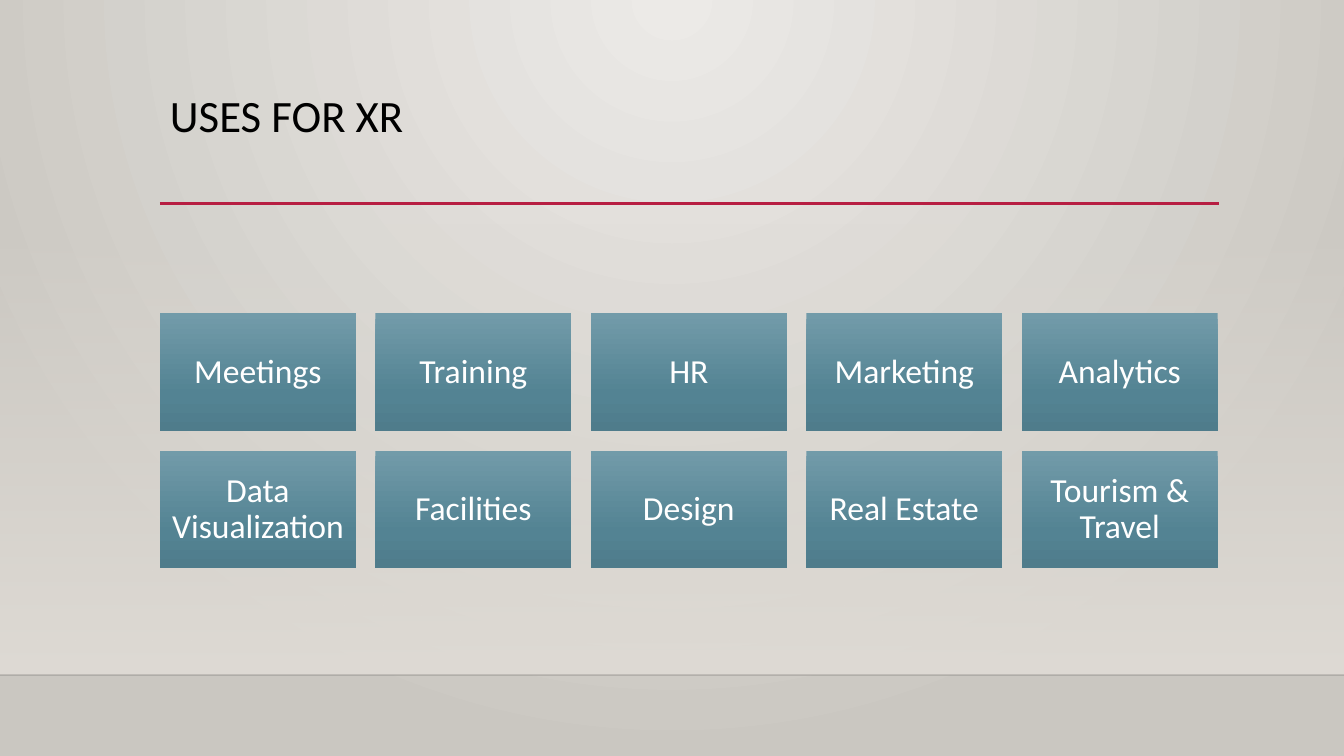
from lxml.etree import SubElement
from pptx import Presentation
from pptx.dml.color import RGBColor
from pptx.enum.shapes import MSO_CONNECTOR, MSO_SHAPE
from pptx.enum.text import MSO_ANCHOR, PP_ALIGN
from pptx.oxml.ns import qn
from pptx.util import Cm, Pt

BLACK = RGBColor(0x00, 0x00, 0x00)
WHITE = RGBColor(0xFF, 0xFF, 0xFF)
CRIMSON = RGBColor(0xB7, 0x1E, 0x42)
FLOOR_EDGE = RGBColor(0x00, 0x00, 0x01)
WALL_LIGHT = RGBColor(0xEC, 0xEA, 0xE7)
WALL_DARK = RGBColor(0xCA, 0xC7, 0xC1)
HAZE = RGBColor(0xDF, 0xDB, 0xD5)
TEAL_LIGHT = RGBColor(0x72, 0x9B, 0xA9)
TEAL = RGBColor(0x53, 0x83, 0x93)
TEAL_DARK = RGBColor(0x4F, 0x7C, 0x8B)
FONT = "Calibri"

USES = [
    ["Meetings", "Training", "HR", "Marketing", "Analytics"],
    ["Data Visualization", "Facilities", "Design", "Real Estate", "Tourism & Travel"],
]


def set_gradient(fill, owner, stops, radial=False):
    fill.gradient()
    gradient = next(owner.iter(qn("a:gradFill")))
    for child in list(gradient):
        gradient.remove(child)
    stop_list = SubElement(gradient, qn("a:gsLst"))
    for position, color, opacity in stops:
        stop = SubElement(stop_list, qn("a:gs"), pos=str(position * 1000))
        color_element = SubElement(stop, qn("a:srgbClr"), val=str(color))
        if opacity < 100:
            SubElement(color_element, qn("a:alpha"), val=str(opacity * 1000))
    if radial:
        circle = SubElement(gradient, qn("a:path"), path="circle")
        SubElement(circle, qn("a:fillToRect"), l="43000", t="0", r="43000", b="100000")
    else:
        SubElement(gradient, qn("a:lin"), ang="5400000", scaled="0")


def add_rule(slide, left, right, top, color, width):
    rule = slide.shapes.add_connector(MSO_CONNECTOR.STRAIGHT, left, top, right, top)
    rule.line.color.rgb = color
    rule.line.width = width
    SubElement(rule._element.spPr, qn("a:effectLst"))
    return rule


presentation = Presentation()
presentation.slide_width = Cm(33.87)
presentation.slide_height = Cm(19.05)
slide = presentation.slides.add_slide(presentation.slide_layouts[5])
set_gradient(slide.background.fill, slide._element,
             [(0, WALL_LIGHT, 100), (100, WALL_DARK, 100)], radial=True)

haze = slide.shapes.add_shape(MSO_SHAPE.RECTANGLE, 0, Cm(5.61), presentation.slide_width, Cm(11.4))
haze.shadow.inherit = False
haze.line.fill.background()
set_gradient(haze.fill, haze._element, [(0, HAZE, 0), (100, HAZE, 100)])

floor_edge = add_rule(slide, 0, presentation.slide_width, Cm(17.01), FLOOR_EDGE, Pt(1))
edge_color = next(floor_edge._element.spPr.iter(qn("a:srgbClr")))
SubElement(edge_color, qn("a:alpha"), val="20000")
add_rule(slide, Cm(4.03), Cm(30.73), Cm(5.13), CRIMSON, Pt(2.5))

title = slide.shapes.title
title.left, title.top, title.width, title.height = Cm(4.03), Cm(2.23), Cm(26.67), Cm(2.92)
title.text_frame.text = "USES FOR XR"
title.text_frame.vertical_anchor = MSO_ANCHOR.TOP
paragraph = title.text_frame.paragraphs[0]
paragraph.alignment = PP_ALIGN.LEFT
paragraph.line_spacing = 0.9
paragraph.font.name = FONT
paragraph.font.size = Pt(32)
paragraph.font.color.rgb = BLACK

for row, names in enumerate(USES):
    for column, name in enumerate(names):
        tile = slide.shapes.add_shape(
            MSO_SHAPE.RECTANGLE, Cm(4.03 + 5.43 * column), Cm(7.9 + 3.46 * row), Cm(4.94), Cm(2.96))
        tile.shadow.inherit = False
        tile.line.fill.background()
        set_gradient(tile.fill, tile._element,
                     [(0, TEAL_LIGHT, 100), (69, TEAL, 100), (100, TEAL_DARK, 100)])
        frame = tile.text_frame
        frame.word_wrap = True
        frame.vertical_anchor = MSO_ANCHOR.MIDDLE
        frame.margin_left = frame.margin_right = frame.margin_top = frame.margin_bottom = Cm(0.24)
        frame.text = name
        paragraph = frame.paragraphs[0]
        paragraph.alignment = PP_ALIGN.CENTER
        paragraph.line_spacing = 0.9
        paragraph.font.name = FONT
        paragraph.font.size = Pt(24)
        paragraph.font.color.rgb = WHITE

presentation.save("out.pptx")
